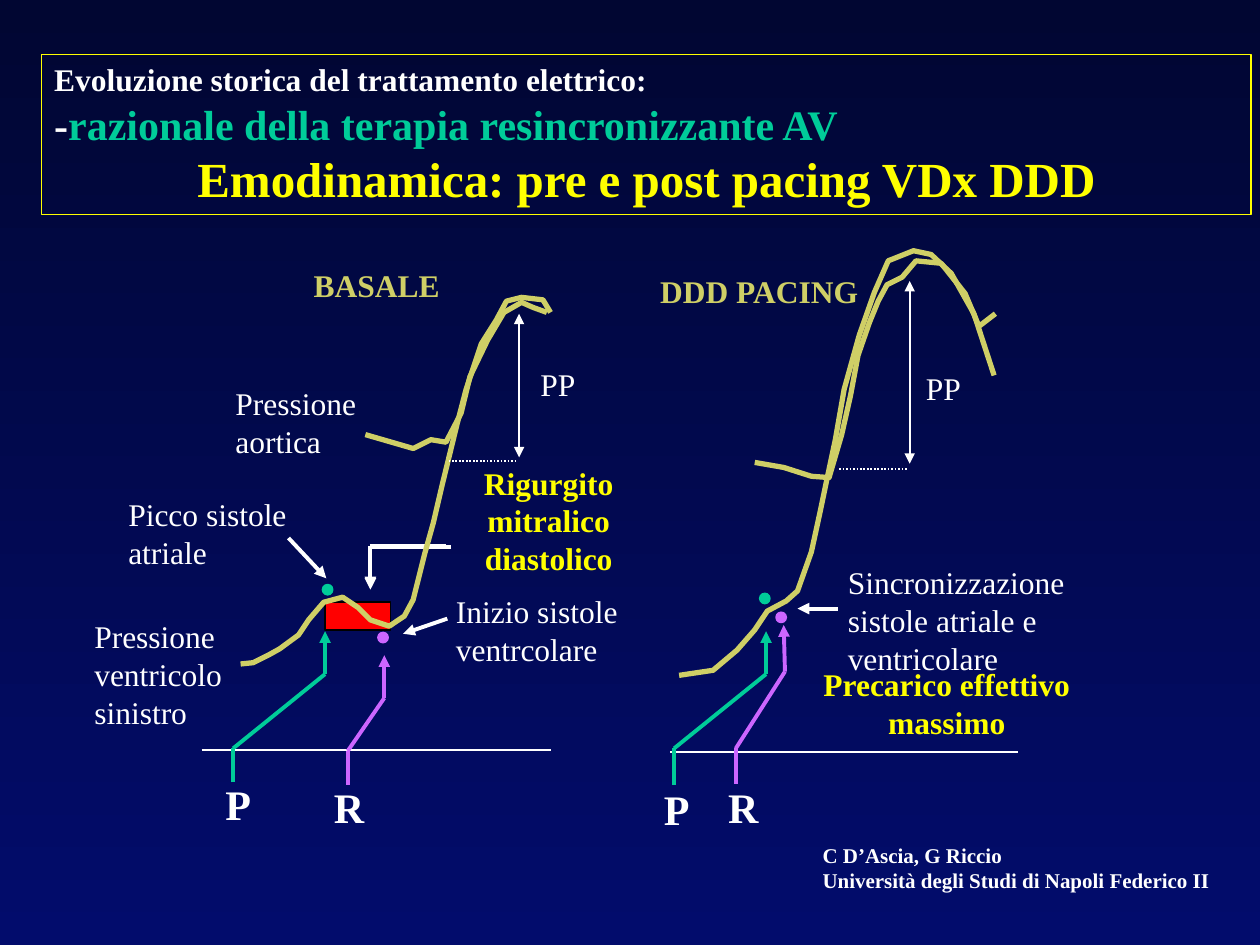
from itertools import pairwise

from lxml.etree import SubElement
from pptx import Presentation
from pptx.dml.color import RGBColor
from pptx.enum.dml import MSO_LINE
from pptx.enum.shapes import MSO_CONNECTOR as Link, MSO_SHAPE as Shape
from pptx.enum.text import MSO_ANCHOR as Anchor, MSO_AUTO_SIZE as Fit, PP_ALIGN as Align
from pptx.oxml.ns import qn
from pptx.util import Inches, Pt

FONT = "Times New Roman"
WHITE, YELLOW, SAND = "FFFFFF", "FFFF00", "CFCF66"
GREEN, VIOLET, RED, BLACK = "00CC99", "CC66FF", "FF0000", "000000"
WIDE, HIGH = 10, 7.5
CELL = 0.01  # grid cell of a panel, in inches


def color(code):
    return RGBColor.from_string(code)


def style(para, size, code, bold=False, align=Align.LEFT):
    para.alignment = align
    font = para.font
    font.name, font.size, font.bold = FONT, Pt(size), bold
    font.color.rgb = color(code)


def stroke(shape, code, width):
    shape.line.color.rgb = color(code)
    shape.line.width = Pt(width)


class Panel:
    """A group whose members sit on a fine grid, measured from its corner."""

    def __init__(self, slide, left, top):
        self.left, self.top = left, top
        self.shapes = slide.shapes.add_group_shape().shapes

    def spot(self, col, row):
        return Inches(self.left + col * CELL), Inches(self.top + row * CELL)

    def line(self, start, end, code=WHITE, width=2.25, head=False, tail=False, dots=False):
        link = self.shapes.add_connector(Link.STRAIGHT, *self.spot(*start), *self.spot(*end))
        stroke(link, code, width)
        if dots:
            link.line.dash_style = MSO_LINE.ROUND_DOT
        props = link._element.spPr
        for tag, used in (("a:headEnd", head), ("a:tailEnd", tail)):
            if used:
                SubElement(props.find(qn("a:ln")), qn(tag), type="triangle")
        SubElement(props, qn("a:effectLst"))

    def route(self, points, code=WHITE):
        legs = list(pairwise(points))
        for leg in legs:
            self.line(*leg, code, tail=leg is legs[-1])

    def curve(self, points):
        first, *rest = [self.spot(*point) for point in points]
        pen = self.shapes.build_freeform(*first)
        pen.add_line_segments(rest, close=False)
        trace = pen.convert_to_shape()
        trace.fill.background()
        trace.shadow.inherit = False
        stroke(trace, SAND, 3)

    def block(self, kind, col, row, wide, high, fill, edge):
        shape = self.shapes.add_shape(kind, *self.spot(col, row),
                                      Inches(wide * CELL), Inches(high * CELL))
        shape.fill.solid()
        shape.fill.fore_color.rgb = color(fill)
        shape.shadow.inherit = False
        stroke(shape, edge, 1)

    def label(self, col, row, wide, text, code=WHITE, bold=False, size=18):
        rows = text.split("\n")
        box = self.shapes.add_textbox(*self.spot(col, row), Inches(wide * CELL),
                                      Inches(0.1 + len(rows) * size / 60))
        frame = box.text_frame
        frame.word_wrap, frame.auto_size = False, Fit.SHAPE_TO_FIT_TEXT
        frame.text = text
        for para in frame.paragraphs:
            style(para, size, code, bold, Align.CENTER if bold else Align.LEFT)

    def plot(self, curves, axis, pulse, base, leads, dots, marks):
        """What both panels share."""
        for points in curves:
            self.curve(points)
        self.line(*axis, width=1)
        self.line(*pulse, width=1, head=True, tail=True)
        self.line(*base, width=1, dots=True)
        for points, dot, mark, text, code in zip(leads, dots, marks, "PR", (GREEN, VIOLET)):
            self.route(points, code)
            self.block(Shape.OVAL, *dot, 8, 8, code, code)
            self.label(*mark, text, bold=True, size=24)


def basal(slide, left, top):
    panel = Panel(slide, left, top)
    # Mitral regurgitation area and its bent arrows
    panel.block(Shape.RECTANGLE, 198, 288, 52, 22, RED, BLACK)
    panel.route([(294, 243), (234, 243), (234, 278)])
    panel.route([(298, 244), (234, 244), (234, 277)])
    panel.plot(
        curves=[
            [(131, 337), (141, 336), (153, 330), (162, 325), (177, 314), (185, 302),
             (197, 288), (212, 284), (224, 292), (234, 302), (249, 307), (261, 299),
             (268, 286), (277, 250), (284, 225), (291, 195), (303, 146), (310, 119),
             (322, 83), (334, 64), (342, 49), (354, 46), (371, 48), (377, 58)],
            [(230, 155), (268, 166), (282, 159), (294, 161), (306, 138), (313, 109),
             (327, 80), (340, 58), (354, 50), (363, 54), (374, 58)]],
        axis=[(100, 405), (377, 405)],
        pulse=[(352, 59), (352, 173)],
        base=[(296, 176), (350, 176)],
        leads=[[(125, 431), (125, 404), (198, 345), (198, 311)],
               [(216, 433), (216, 406), (245, 364), (245, 330)]],
        dots=[(196, 274), (240, 312)],
        marks=[(109, 423, 40), (195, 425, 44)])
    # Pointers and labels
    panel.line((169, 237), (199, 269), tail=True)
    panel.line((295, 301), (260, 313), tail=True)
    panel.label(179, 16, 120, "BASALE", SAND, True)
    panel.label(314, 173, 123, "Rigurgito\nmitralico\ndiastolico", YELLOW, True)
    panel.label(117, 110, 116, "Pressione\naortica")
    panel.label(32, 198, 146, "Picco sistole\natriale")
    panel.label(5, 295, 122, "Pressione\nventricolo\nsinistro")
    panel.label(292, 275, 149, "Inizio sistole\nventrcolare")
    panel.label(359, 95, 48, "PP")


def paced(slide, left, top):
    panel = Panel(slide, left, top)
    panel.plot(
        curves=[
            [(29, 346), (56, 342), (75, 326), (89, 310), (99, 295), (114, 287),
             (123, 279), (134, 248), (141, 216), (146, 192), (153, 159), (160, 119),
             (172, 76), (184, 42), (195, 17), (215, 9), (229, 12), (245, 27),
             (263, 59), (279, 108)],
            [(89, 177), (112, 181), (134, 188), (148, 189), (158, 155), (165, 124),
             (171, 92), (180, 66), (187, 49), (194, 36), (206, 30), (217, 17),
             (237, 19), (256, 43), (267, 69), (280, 59)]],
        axis=[(22, 407), (298, 407)],
        pulse=[(212, 33), (212, 178)],
        base=[(156, 182), (210, 182)],
        leads=[[(25, 433), (25, 404), (98, 345), (98, 311)],
               [(74, 432), (74, 404), (113, 343), (112, 306)]],
        dots=[(93, 281), (106, 296)],
        marks=[(7, 427, 40), (58, 425, 44)])
    # Pointer and labels
    panel.line((155, 293), (123, 293), tail=True)
    panel.label(3, 21, 179, "DDD PACING", SAND, True)
    panel.label(153, 252, 192, "Sincronizzazione\nsistole atriale e\nventricolare")
    panel.label(133, 333, 217, "Precarico effettivo\nmassimo", YELLOW, True)
    panel.label(215, 98, 48, "PP")


def heading(slide, left, top, wide, high):
    title = slide.shapes.title
    title.left, title.top, title.width, title.height = map(Inches, (left, top, wide, high))
    stroke(title, YELLOW, 0.75)
    frame = title.text_frame
    frame.word_wrap, frame.auto_size = True, Fit.NONE
    frame.vertical_anchor = Anchor.TOP
    frame.text = ("Evoluzione storica del trattamento elettrico:\n-\n"
                  "Emodinamica: pre e post pacing VDx DDD")
    intro, theme, topic = frame.paragraphs
    style(intro, 18, WHITE, True)
    style(theme, 24, WHITE, True)
    style(topic, 28, YELLOW, True, Align.CENTER)
    run = theme.add_run()
    run.text = "razionale della terapia resincronizzante AV"
    run.font.color.rgb = color(GREEN)


def credit(slide, left, top, wide, high):
    frame = slide.shapes.add_textbox(*map(Inches, (left, top, wide, high))).text_frame
    frame.word_wrap, frame.auto_size = True, Fit.SHAPE_TO_FIT_TEXT
    frame.text = "C D’Ascia, G Riccio\nUniversità degli Studi di Napoli Federico II"
    for para, align in zip(frame.paragraphs, (Align.LEFT, Align.JUSTIFY)):
        style(para, 12, WHITE, True, align)


def main():
    deck = Presentation()
    deck.slide_width, deck.slide_height = Inches(WIDE), Inches(HIGH)
    slide = deck.slides.add_slide(deck.slide_layouts[5])
    # Background runs from dark at the top to blue
    fill = slide.background.fill
    fill.gradient()
    fill.gradient_angle = 270
    for stop, code in zip(fill.gradient_stops, ("010632", "020C6C")):
        stop.color.rgb = color(code)
    heading(slide, 0.33, 0.43, 0.96 * WIDE, 0.17 * HIGH)
    credit(slide, 6.43, 6.64, 0.35 * WIDE, 0.07 * HIGH)
    basal(slide, 0.06 * WIDE, 1.9)
    paced(slide, 0.51 * WIDE, 1.9)
    deck.save("out.pptx")


if __name__ == "__main__":
    main()
